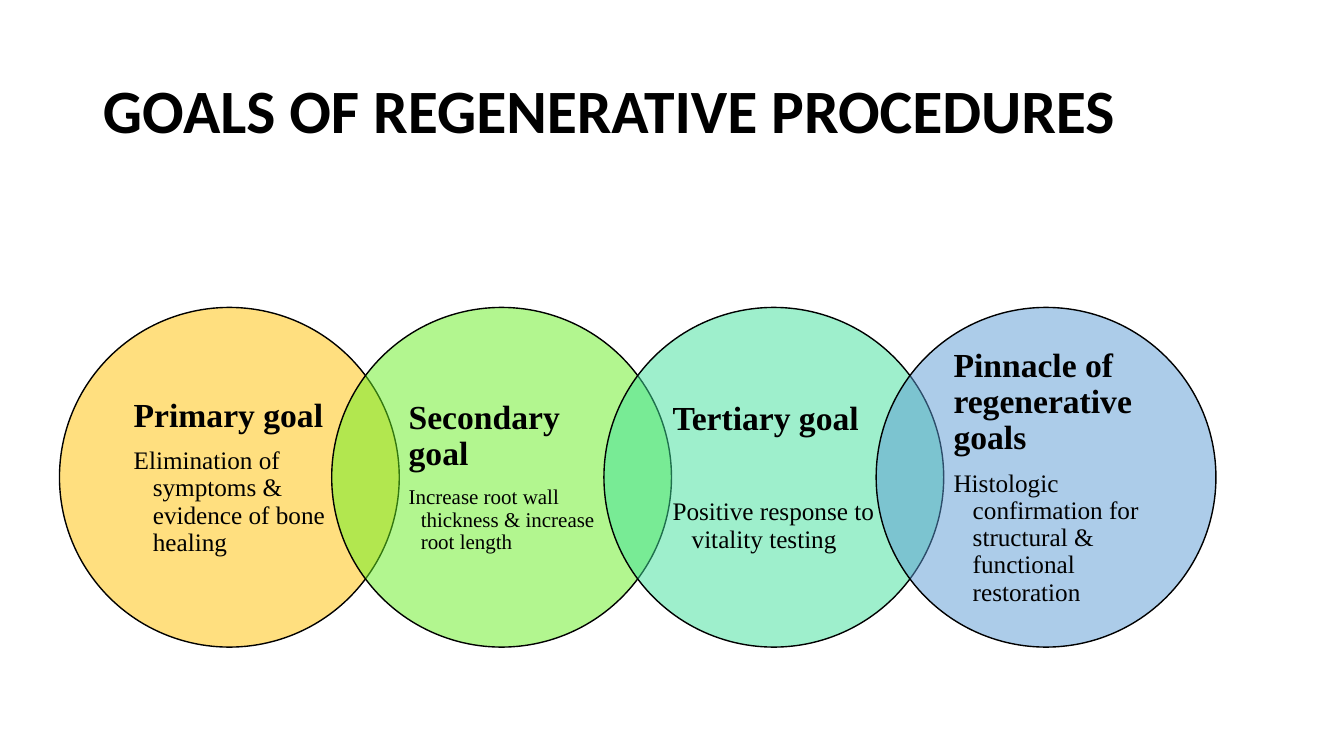
from lxml import etree
from pptx import Presentation, util as u
from pptx.dml.color import RGBColor
from pptx.enum import shapes, text
from pptx.oxml.ns import qn

BLACK = RGBColor(0x00, 0x00, 0x00)
AMBER = RGBColor(0xFF, 0xC0, 0x00)
LIME = RGBColor(0x67, 0xEF, 0x21)
MINT = RGBColor(0x3F, 0xE1, 0x9B)
BLUE = RGBColor(0x5B, 0x9B, 0xD5)

# Circle row: size, first left edge, top, step and text inset
SIZE, LEFT, TOP, STEP, INSET = 3.37, 0.59, 3.05, 2.7, 0.49

# Colour, heading, detail, detail size, hanging indent, gap after heading
GOALS = [
    (AMBER, "Primary goal",
     "Elimination of symptoms & evidence of bone healing", 18, 0.19, 9.7),
    (LIME, "Secondary goal",
     "Increase root wall thickness & increase root length", 15, 0.12, 9.7),
    (MINT, "Tertiary goal",
     "Positive response to vitality testing", 18, 0.19, 44.2),
    (BLUE, "Pinnacle of regenerative goals",
     "Histologic confirmation for structural & functional restoration",
     18, 0.19, 9.7),
]


def write(par, words, size=18, font="Times New Roman", bold=False,
          after=0, hang=0):
    """Fill a paragraph with one formatted run."""
    par.alignment = text.PP_ALIGN.LEFT
    par.line_spacing = 0.9
    par.space_after = u.Pt(after)
    run = par.add_run()
    run.text = words
    run.font.name = font
    run.font.size = u.Pt(size)
    run.font.bold = bold
    run.font.color.rgb = BLACK
    if hang:
        par.level = 1
        props = par._p.get_or_add_pPr()
        props.set("marL", str(u.Inches(hang)))
        props.set("indent", str(-u.Inches(hang)))


class Deck:
    def __init__(self):
        self.file = Presentation()
        self.file.slide_width = u.Inches(13.33)
        self.file.slide_height = u.Inches(7.5)
        self.slide = self.file.slides.add_slide(self.file.slide_layouts[5])
        self.group = self.slide.shapes.add_group_shape()

    def title(self, words):
        head = self.slide.shapes.title
        head.left, head.top = u.Inches(0.92), u.Inches(0.4)
        head.width, head.height = u.Inches(11.5), u.Inches(1.45)
        head.text_frame.vertical_anchor = text.MSO_ANCHOR.MIDDLE
        write(head.text_frame.paragraphs[0], words, size=44,
              font="Calibri", bold=True)

    def circle(self, left, color):
        disc = self.group.shapes.add_shape(
            shapes.MSO_SHAPE.OVAL, u.Inches(left), u.Inches(TOP),
            u.Inches(SIZE), u.Inches(SIZE))
        disc.shadow.inherit = False
        disc.fill.solid()
        disc.fill.fore_color.rgb = color
        disc.line.color.rgb = BLACK
        disc.line.width = u.Pt(1)
        # Half transparent, so that overlaps show
        tint = disc.element.spPr.find(qn("a:solidFill")).find(qn("a:srgbClr"))
        etree.SubElement(tint, qn("a:alpha")).set("val", "50000")

    def label(self, left, head, detail, size, hang, gap):
        side = u.Inches(SIZE - 2 * INSET)
        box = self.group.shapes.add_textbox(
            u.Inches(left + INSET), u.Inches(TOP + INSET), side, side)
        frame = box.text_frame
        frame.word_wrap = True
        frame.vertical_anchor = text.MSO_ANCHOR.MIDDLE
        frame.margin_left = frame.margin_right = u.Inches(0.19)
        frame.margin_top = frame.margin_bottom = u.Inches(0.03)
        # Centre the block while its lines stay left aligned
        frame._txBody.find(qn("a:bodyPr")).set("anchorCtr", "1")
        write(frame.paragraphs[0], head, size=24, bold=True, after=gap)
        write(frame.add_paragraph(), detail, size=size, hang=hang, after=3)


def main():
    deck = Deck()
    deck.title("GOALS OF REGENERATIVE PROCEDURES")

    # Row of overlapping circles
    for i, (color, *words) in enumerate(GOALS):
        left = LEFT + i * STEP
        deck.circle(left, color)
        deck.label(left, *words)

    deck.file.save("out.pptx")


if __name__ == "__main__":
    main()
